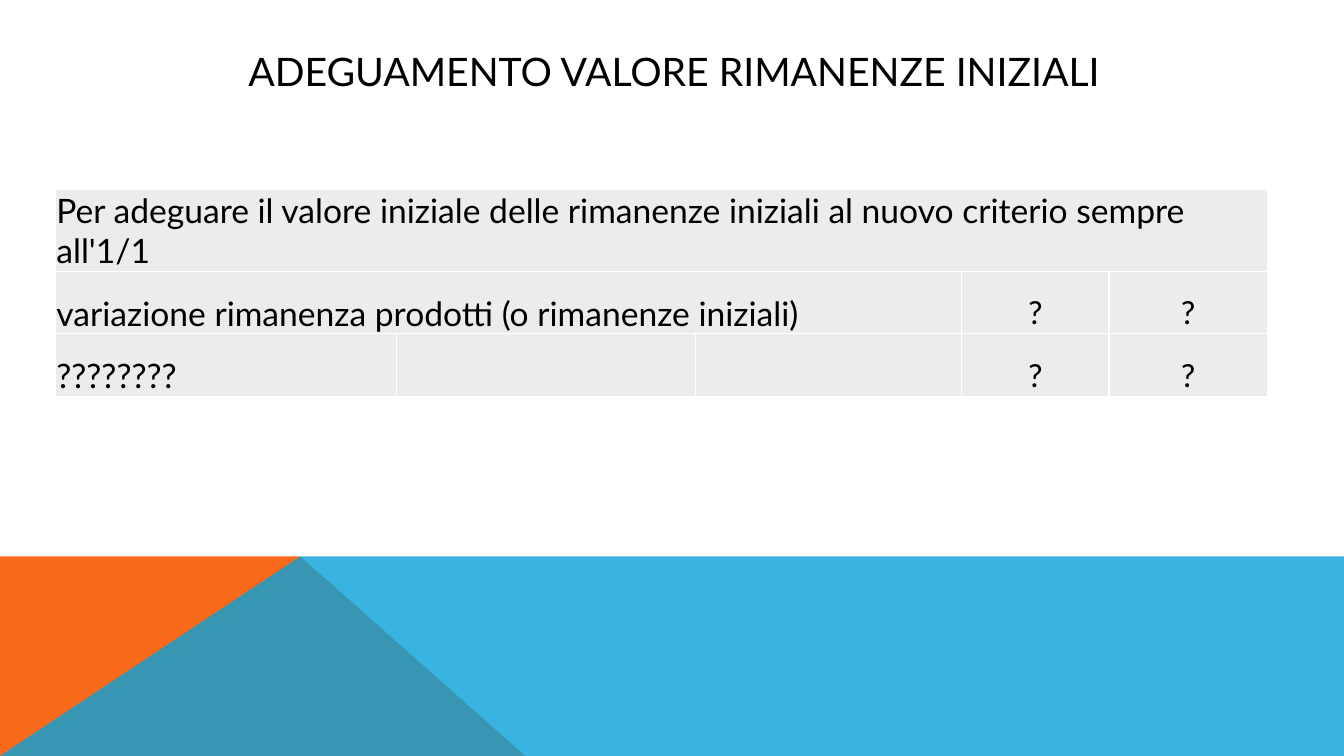
from dataclasses import dataclass

from lxml.etree import SubElement
from pptx import Presentation
from pptx.dml.color import RGBColor
from pptx.enum.text import MSO_ANCHOR as Anchor, MSO_AUTO_SIZE as AutoSize, PP_ALIGN as Align
from pptx.oxml.ns import qn
from pptx.util import Inches, Pt

TITLE = "ADEGUAMENTO VALORE RIMANENZE INIZIALI"
# Each row lists (text, columns spanned)
ROWS = [
    [("Per adeguare il valore iniziale delle rimanenze iniziali "
      "al nuovo criterio sempre all'1/1", 5)],
    [("variazione rimanenza prodotti (o rimanenze iniziali)", 3), ("?", 1), ("?", 1)],
    [("????????", 1), ("", 1), ("", 1), ("?", 1), ("?", 1)],
]


@dataclass(frozen=True)
class Theme:
    ink: str = "000000"
    cell: str = "ECECEC"
    border: str = "FFFFFF"
    orange: str = "F96A1B"
    blue: str = "08A1D9"
    blue_alpha: int = 80
    text_font: str = "Lato"
    mark_font: str = "Calibri"
    title_size: int = 28
    table_size: int = 24
    border_width: int = 1


THEME = Theme()
WIDTH, HEIGHT = 13.33, 7.5
BAND_TOP, PEAK, FOOT = 5.52, 2.98, 5.21
TITLE_BOX = (1.2, 0.4, 10.97, 0.6)
TABLE_LEFT, TABLE_TOP, ROW_HEIGHT = 0.55, 1.88, 0.62
COLUMNS = [3.38, 2.97, 2.64, 1.46, 1.57]
INSET = 0.01

BAND = [
    ([(0, HEIGHT), (0, BAND_TOP), (PEAK, BAND_TOP), (FOOT, HEIGHT)], THEME.orange, 100),
    ([(0, HEIGHT), (PEAK, BAND_TOP), (WIDTH, BAND_TOP), (WIDTH, HEIGHT)],
     THEME.blue, THEME.blue_alpha),
]


def style(paragraph, font, size, align):
    paragraph.alignment = align
    for run in paragraph.runs:
        run.font.name = font
        run.font.size = Pt(size)
        run.font.color.rgb = RGBColor.from_string(THEME.ink)


def add_polygon(slide, points, color, alpha):
    start, *rest = [(Inches(x), Inches(y)) for x, y in points]
    builder = slide.shapes.build_freeform(*start)
    builder.add_line_segments(rest, close=True)
    polygon = builder.convert_to_shape()
    polygon.shadow.inherit = False
    polygon.line.fill.background()
    polygon.fill.solid()
    polygon.fill.fore_color.rgb = RGBColor.from_string(color)
    if alpha < 100:
        tint = polygon.fill._xPr.find(f".//{qn('a:srgbClr')}")
        SubElement(tint, qn("a:alpha"), val=str(alpha * 1000))


def format_cell(cell):
    """Give a cell its borders, then its fill, in the order the schema asks for."""
    properties = cell._tc.get_or_add_tcPr()
    for side in ("a:lnL", "a:lnR", "a:lnT", "a:lnB"):
        line = SubElement(properties, qn(side), w=str(Pt(THEME.border_width)))
        SubElement(SubElement(line, qn("a:solidFill")), qn("a:srgbClr"), val=THEME.border)
    cell.fill.solid()
    cell.fill.fore_color.rgb = RGBColor.from_string(THEME.cell)
    cell.margin_left = cell.margin_right = cell.margin_top = Inches(INSET)
    cell.margin_bottom = 0
    cell.vertical_anchor = Anchor.BOTTOM


def add_table(slide):
    table = slide.shapes.add_table(
        len(ROWS), len(COLUMNS), Inches(TABLE_LEFT), Inches(TABLE_TOP),
        Inches(sum(COLUMNS)), Inches(ROW_HEIGHT * len(ROWS))).table
    table.first_row = table.horz_banding = False
    for column, width in zip(table.columns, COLUMNS):
        column.width = Inches(width)
    for row in table.rows:
        row.height = Inches(ROW_HEIGHT)
    for cell in table.iter_cells():
        format_cell(cell)
    for r, entries in enumerate(ROWS):
        c = 0
        for text, span in entries:
            cell = table.cell(r, c)
            if span > 1:
                cell.merge(table.cell(r, c + span - 1))
            if text:
                cell.text_frame.text = text
                is_mark = text == "?"
                style(cell.text_frame.paragraphs[0],
                      THEME.mark_font if is_mark else THEME.text_font,
                      THEME.table_size, Align.CENTER if is_mark else Align.LEFT)
            c += span


def main():
    deck = Presentation()
    deck.slide_width, deck.slide_height = Inches(WIDTH), Inches(HEIGHT)
    slide = deck.slides.add_slide(deck.slide_layouts[5])
    for points, color, alpha in BAND:
        add_polygon(slide, points, color, alpha)
    title = slide.shapes.title
    title.left, title.top, title.width, title.height = map(Inches, TITLE_BOX)
    title.text_frame.text = TITLE
    title.text_frame.auto_size = AutoSize.NONE
    title.text_frame.vertical_anchor = Anchor.MIDDLE
    style(title.text_frame.paragraphs[0], THEME.text_font, THEME.title_size, Align.CENTER)
    add_table(slide)
    deck.save("out.pptx")


if __name__ == "__main__":
    main()
